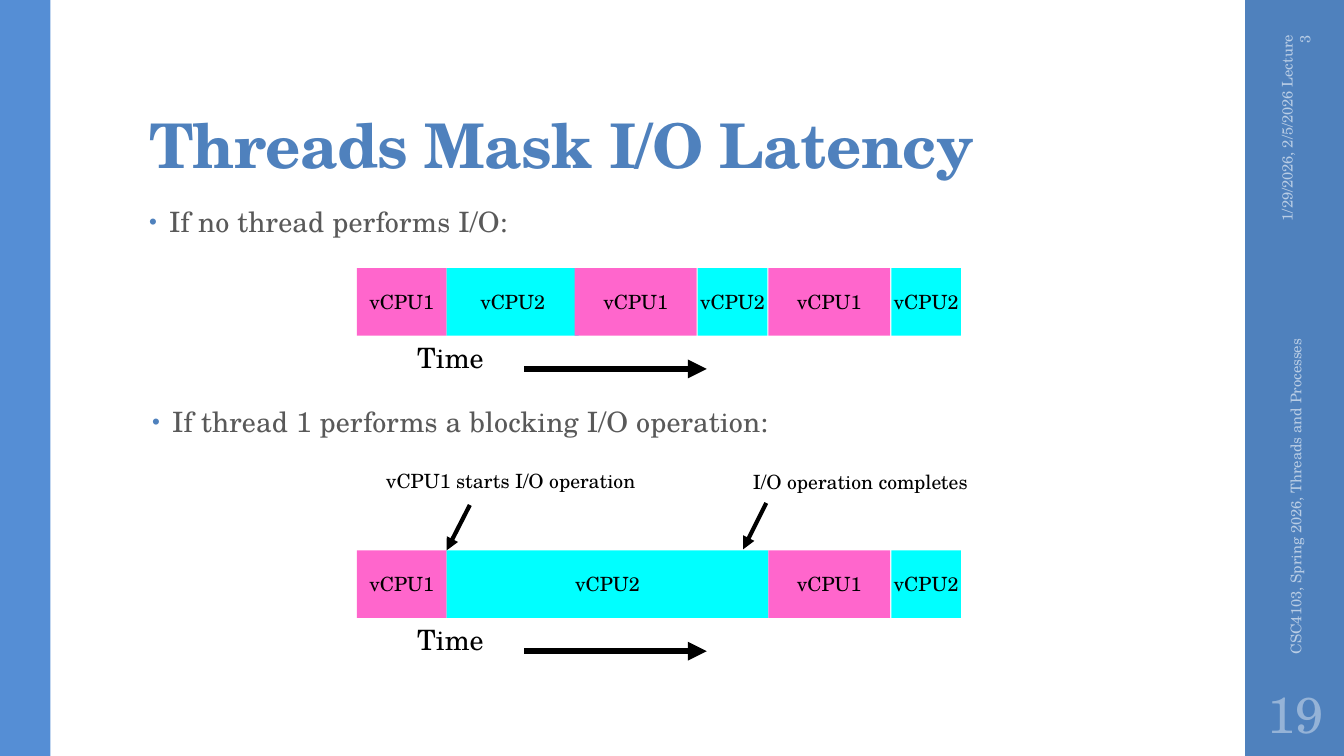
import pptx
import pptx.util
import pptx.dml.color
import pptx.enum.shapes
import pptx.enum.text
import pptx.oxml.ns
import lxml.etree

Inches = pptx.util.Inches
Align = pptx.enum.text.PP_ALIGN
Anchor = pptx.enum.text.MSO_ANCHOR

THEME = {
    "font": "TeX Gyre Schola",
    "blue": "4F81BD", "edge": "558ED5", "pale": "B9CDE5", "page": "95B3D7",
    "gray": "595959", "black": "000000", "vCPU1": "FF66CC", "vCPU2": "00FFFF",
    "title": 44, "body": 20, "label": 14, "foot": 10.5, "number": 36,
}

TITLE = "Threads Mask I/O Latency"
BULLETS = [
    ("If no thread performs I/O:", (1.38, 2, 9.4, 4.76)),
    ("If thread 1 performs a blocking I/O operation:", (1.41, 3.99, 9.4, 3.02)),
]
BANDS = [((12.35, 0, 1, 7.5), "blue"), ((0, 0, 0.5, 7.5), "edge")]
FOOTERS = [
    ("1/29/2026, 2/5/2026 Lecture 3", (11.81, 1.09, 2.08, 0.4), Align.RIGHT),
    ("CSC4103, Spring 2026, Threads and Processes", (10.89, 4.43, 3.92, 0.4), Align.LEFT),
]
PAGE = "19"

FIRST = ("vCPU1", 3.54, 0.89)
LAST = [("vCPU1", 7.62, 1.21), ("vCPU2", 8.84, 0.69)]
LINES = [
    {"top": 2.66,
     "slots": [FIRST, ("vCPU2", 4.43, 1.31), ("vCPU1", 5.7, 1.21),
               ("vCPU2", 6.92, 0.69)] + LAST,
     "notes": []},
    {"top": 5.46,
     "slots": [FIRST, ("vCPU2", 4.43, 3.19)] + LAST,
     "notes": [
         ("vCPU1 starts I/O operation", (3.73, 4.6, 2.69, 0.34), (4.66, 5.01, 4.43, 5.46)),
         ("I/O operation completes", (7.37, 4.61, 2.36, 0.34), (7.6, 4.99, 7.37, 5.45)),
     ]},
]
HIGH = 0.67


def color(name):
    return pptx.dml.color.RGBColor.from_string(THEME[name])


def add_tag(parent, tag, **attrs):
    return lxml.etree.SubElement(parent, pptx.oxml.ns.qn(tag), **attrs)


def add_bar(shapes, box, fill):
    bar = shapes.add_shape(pptx.enum.shapes.MSO_SHAPE.RECTANGLE, *map(Inches, box))
    bar.shadow.inherit = False
    bar.fill.solid()
    bar.fill.fore_color.rgb = color(fill)
    bar.line.fill.background()
    return bar


def add_text(shapes, text, box, shape=None, size="label", tint="black", bold=False,
             align=Align.LEFT, anchor=Anchor.TOP, wrap=True, inset=(0.1, 0.05, 0.1, 0.05),
             turn=0, bullet=False, space=None, track=None):
    shape = shape or shapes.add_textbox(*map(Inches, box))
    shape.rotation = turn
    frame = shape.text_frame
    frame.word_wrap = wrap
    frame.vertical_anchor = anchor
    frame.margin_left, frame.margin_top, frame.margin_right, frame.margin_bottom = map(Inches, inset)
    para = frame.paragraphs[0]
    para.alignment = align
    if space:
        para.line_spacing = space
    if bullet:
        props = para._p.get_or_add_pPr()
        props.set("marL", str(Inches(0.2)))
        props.set("indent", str(Inches(-0.2)))
        add_tag(add_tag(props, "a:buClr"), "a:srgbClr", val=THEME["blue"])
        add_tag(props, "a:buSzPct", val="80000")
        add_tag(props, "a:buFont", typeface="Arial")
        add_tag(props, "a:buChar", char="•")
    run = para.add_run()
    run.text = text
    run.font.name = THEME["font"]
    run.font.size = pptx.util.Pt(THEME[size])
    run.font.bold = bold
    run.font.color.rgb = color(tint)
    if track:
        run._r.get_or_add_rPr().set("spc", str(track))


def add_arrow(shapes, ends, width):
    arrow = shapes.add_connector(pptx.enum.shapes.MSO_CONNECTOR.STRAIGHT, *map(Inches, ends))
    arrow.line.color.rgb = color("black")
    arrow.line.width = pptx.util.Pt(width)
    add_tag(arrow.line._get_or_add_ln(), "a:tailEnd", type="triangle")
    add_tag(arrow._element.spPr, "a:effectLst")


def add_line(shapes, top, slots, notes):
    for name, left, width in slots:
        box = (left, top, width, HIGH)
        add_text(shapes, name, box, shape=add_bar(shapes, box, name),
                 align=Align.CENTER, anchor=Anchor.MIDDLE, wrap=False)
    add_text(shapes, "Time", (4.04, top + HIGH, 0.94, 0.44), size="body", wrap=False)
    add_arrow(shapes, (5.2, top + 1, 7.01, top + 1), 4.5)
    for text, box, ends in notes:
        add_arrow(shapes, ends, 3)
        add_text(shapes, text, box, wrap=False)


def main():
    deck = pptx.Presentation()
    deck.slide_width, deck.slide_height = Inches(13.33), Inches(7.5)
    shapes = deck.slides.add_slide(deck.slide_layouts[6]).shapes
    for box, fill in BANDS:
        add_bar(shapes, box, fill)
    add_text(shapes, TITLE, (1.38, 0.32, 10.6, 1.53), size="title", tint="blue", bold=True,
             anchor=Anchor.BOTTOM, inset=(0.1, 0.03, 0.1, 0.05), space=0.9, track=-50)
    for text, box in BULLETS:
        add_text(shapes, text, box, size="body", tint="gray", bullet=True, space=0.95, track=10)
    for text, box, align in FOOTERS:
        add_text(shapes, text, box, size="foot", tint="pale", align=align,
                 anchor=Anchor.MIDDLE, turn=270)
    add_text(shapes, PAGE, (12.35, 6.75, 1, 0.65), size="number", tint="page",
             align=Align.CENTER, anchor=Anchor.MIDDLE, inset=(0.05,) * 4)
    for line in LINES:
        add_line(shapes.add_group_shape().shapes, **line)
    deck.save("out.pptx")


if __name__ == "__main__":
    main()
